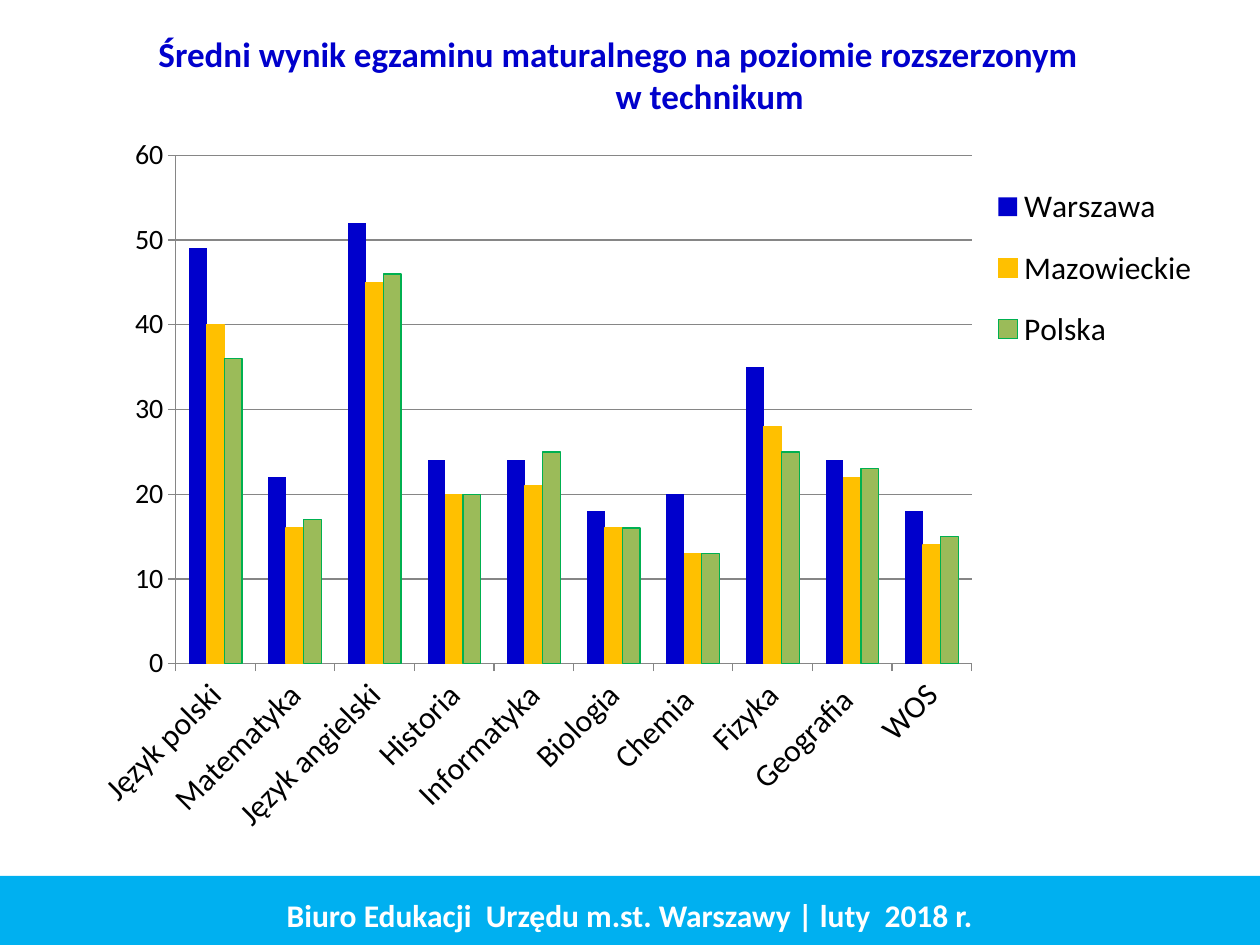
from lxml.etree import SubElement
from pptx import Presentation
from pptx.chart.data import CategoryChartData
from pptx.dml.color import RGBColor
from pptx.enum.chart import XL_CHART_TYPE, XL_LEGEND_POSITION, XL_TICK_MARK
from pptx.enum.shapes import MSO_SHAPE
from pptx.enum.text import MSO_ANCHOR, PP_ALIGN
from pptx.oxml.ns import qn
from pptx.util import Pt

COLORS = {
    "navy": "0000CC", "amber": "FFC000", "olive": "9BBB59", "green": "00B050",
    "sky": "00B0F0", "white": "FFFFFF", "black": "000000", "gray": "868686",
}


def style_font(font, size, color, bold=False):
    for name, value in {"name": "Calibri", "size": Pt(size), "bold": bold}.items():
        setattr(font, name, value)
    font.color.rgb = RGBColor.from_string(COLORS[color])


def place_part(parent, index, **percents):
    for old in parent.findall(qn("c:layout")):
        parent.remove(old)
    layout = parent.makeelement(qn("c:layout"))
    parent.insert(index, layout)
    manual = SubElement(layout, qn("c:manualLayout"))
    if index == 0:
        SubElement(manual, qn("c:layoutTarget")).set("val", "inner")
    for tag in ("xMode", "yMode"):
        SubElement(manual, qn("c:" + tag)).set("val", "edge")
    for tag, value in percents.items():
        SubElement(manual, qn("c:" + tag)).set("val", str(value / 100))


deck = Presentation()
deck.slide_width, deck.slide_height = Pt(720), Pt(540)
page = deck.slides.add_slide(deck.slide_layouts[5])

data = CategoryChartData()
data.categories = [
    "Język polski", "Matematyka", "Język angielski", "Historia", "Informatyka",
    "Biologia", "Chemia ", "Fizyka", "Geografia ", "WOS",
]
results = [
    ("Warszawa", [49, 22, 52, 24, 24, 18, 20, 35, 24, 18], "navy", None),
    ("Mazowieckie ", [40, 16, 45, 20, 21, 16, 13, 28, 22, 14], "amber", "amber"),
    ("Polska", [36, 17, 46, 20, 25, 16, 13, 25, 23, 15], "olive", "green"),
]
for region, values, fill, line in results:
    data.add_series(region, values)
chart = page.shapes.add_chart(
    XL_CHART_TYPE.COLUMN_CLUSTERED, Pt(42.5), Pt(70.5), Pt(657.5), Pt(414), data
).chart
style_font(chart.font, 10, "black")
chart.has_title = False
plot = chart.plots[0]
for name, value in {"gap_width": 150, "overlap": 0, "vary_by_categories": False}.items():
    setattr(plot, name, value)

for series, (region, values, fill, line) in zip(plot.series, results):
    series.format.fill.solid()
    series.format.fill.fore_color.rgb = RGBColor.from_string(COLORS[fill])
    if line:
        series.format.line.color.rgb = RGBColor.from_string(COLORS[line])
        series.format.line.width = Pt(0.75)
    else:
        series.format.line.fill.background()

for axis, size in ((chart.category_axis, 18), (chart.value_axis, 16)):
    style_font(axis.tick_labels.font, size, "black")
    axis.major_tick_mark = XL_TICK_MARK.OUTSIDE
    axis.minor_tick_mark = XL_TICK_MARK.NONE
    axis.format.line.color.rgb = RGBColor.from_string(COLORS["gray"])
    axis.format.line.width = Pt(0.75)
for name, value in {"minimum_scale": 0, "maximum_scale": 60, "major_unit": 10}.items():
    setattr(chart.value_axis, name, value)
grid = chart.value_axis.major_gridlines.format.line
grid.color.rgb = RGBColor.from_string(COLORS["gray"])
grid.width = Pt(0.75)
label_body = chart.category_axis._element.find(qn("c:txPr")).find(qn("a:bodyPr"))
label_body.set("rot", "-2700000")
label_body.set("vert", "horz")

chart.has_legend = True
legend = chart.legend
legend.position = XL_LEGEND_POSITION.RIGHT
legend.include_in_layout = False
style_font(legend.font, 18, "black")
place_part(plot._element.getparent(), 0, x=8.8, y=4.4, w=69.2, h=70.2)
place_part(legend._element, 1, x=80, y=5.7, w=18, h=28.5)

title = page.shapes.title
for name, value in {"left": 82, "top": 15, "width": 578, "height": 55.5}.items():
    setattr(title, name, Pt(value))
frame = title.text_frame
frame.word_wrap = True
frame.vertical_anchor = MSO_ANCHOR.TOP
frame.text = "Średni wynik egzaminu maturalnego na poziomie rozszerzonym\nw technikum"
for para, (side, indent) in zip(frame.paragraphs, (("marR", 35.5), ("marL", 104.5))):
    para.alignment = PP_ALIGN.CENTER
    para.space_before = Pt(0)
    style_font(para.runs[0].font, 20, "navy", True)
    para._p.get_or_add_pPr().set(side, str(Pt(indent)))

footer = page.shapes.add_shape(MSO_SHAPE.RECTANGLE, Pt(0), Pt(500.5), Pt(720), Pt(45))
footer.shadow.inherit = False
footer.fill.solid()
footer.fill.fore_color.rgb = RGBColor.from_string(COLORS["sky"])
footer.line.fill.background()
footer.text_frame.word_wrap = True
footer.text_frame.vertical_anchor = MSO_ANCHOR.MIDDLE
para = footer.text_frame.paragraphs[0]
para.alignment = PP_ALIGN.CENTER
para.space_before = Pt(3.6)
span = para.add_run()
span.text = "Biuro Edukacji  Urzędu m.st. Warszawy | luty  2018 r."
style_font(span.font, 18, "white", True)

deck.save("out.pptx")
